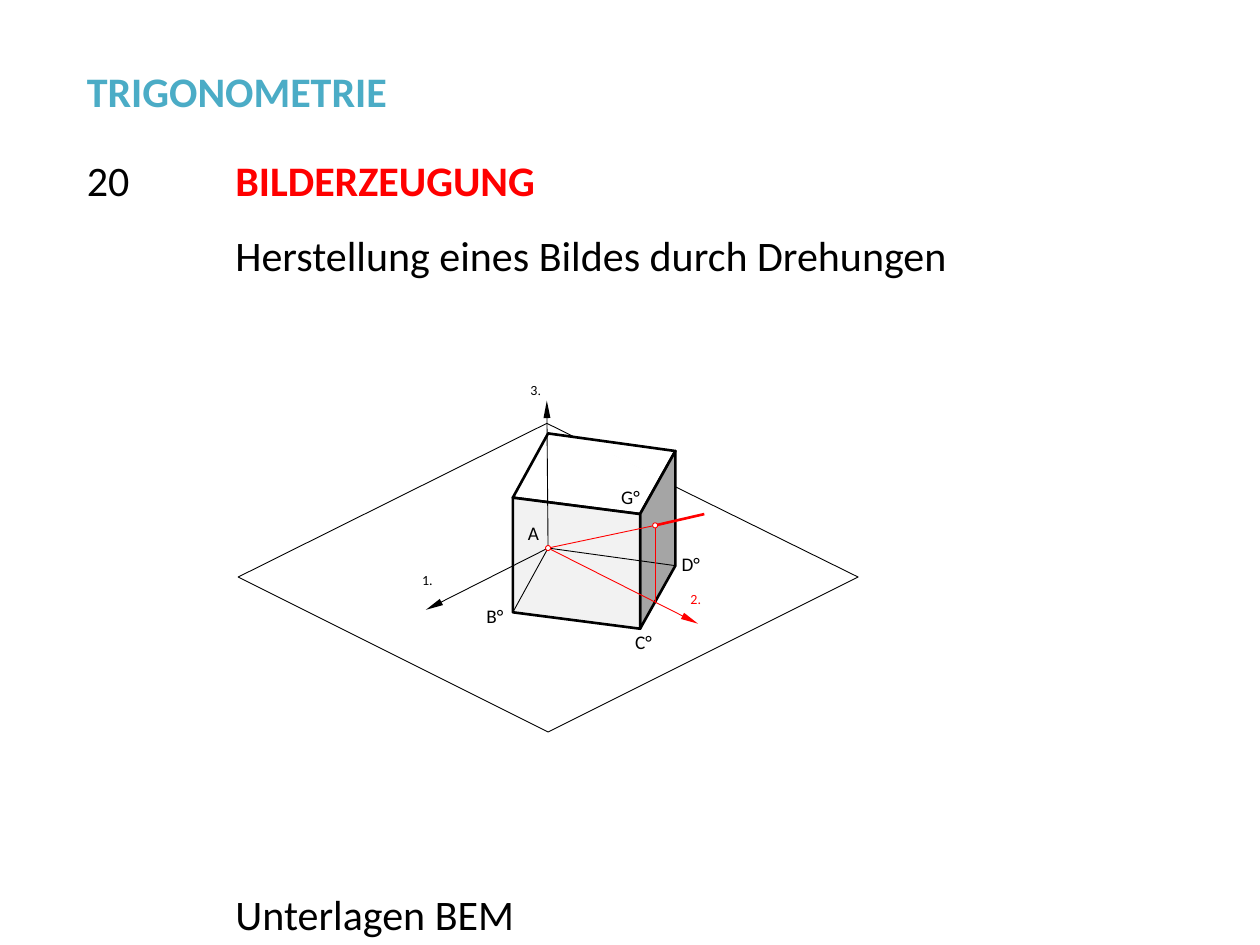
import pptx
import pptx.dml.color
import pptx.enum.shapes
import pptx.oxml
import pptx.util
from pptx.util import Inches, Pt

BLACK, RED, WHITE, TEAL = "000000", "FF0000", "FFFFFF", "4BACC6"
THIN, THICK = 0.5, 1.5

# text, left, top, width, colour, bold
HEADINGS = [
    ("20", 0.59, 1.18, 1.02, BLACK, False),
    ("TRIGONOMETRIE", 0.59, 0.47, 4.41, TEAL, True),
    ("BILDERZEUGUNG", 1.77, 1.18, 6.9, RED, True),
    ("Unterlagen BEM", 1.77, 7, 6.48, BLACK, False),
    ("Herstellung eines Bildes durch Drehungen", 1.77, 1.77, 6.9, BLACK, False),
]

# runs with their fonts, left, top, size, colour
LABELS = [
    ([("C°", "Calibri")], 5.04, 5, 11, BLACK),
    ([("D°", "Calibri")], 5.41, 4.38, 11, BLACK),
    ([("B°", "Calibri")], 3.86, 4.8, 11, BLACK),
    ([("G°", "Calibri")], 4.93, 3.85, 11, BLACK),
    ([("A", "Calibri")], 4.19, 4.14, 11, BLACK),
    ([("1.", "Calibri")], 3.35, 4.54, 8, BLACK),
    ([("2.", "Calibri")], 5.48, 4.69, 8, RED),
    ([("3", "Calibri"), (".", "Times New Roman")], 4.21, 3.03, 8, BLACK),
]

# Corners of the cube's base; the top lies one edge higher
A, B, C, D = (4.35, 4.35), (4.07, 4.86), (5.08, 4.99), (5.36, 4.49)
EDGE = 0.91
TOP_A, TOP_B, TOP_C, TOP_D = [(x, y - EDGE) for x, y in (A, B, C, D)]
PIERCE = (5.2, 4.17)
GROUND = [(4.34, 3.36), (6.81, 4.58), (4.35, 5.81), (1.89, 4.58)]

# corners, fill, line width
FACES = [
    ([TOP_D, TOP_A, TOP_B, TOP_C], None, THICK),
    ([D, C, TOP_C, TOP_D], "A5A5A5", THICK),
    ([B, C, TOP_C, TOP_B], "F2F2F2", THICK),
    ([D, A, B, C], None, THIN),
]

# start, end, colour, line width, arrow
LINES = [
    (A, (4.34, 3.18), BLACK, THIN, True),
    (A, (3.38, 4.84), BLACK, THIN, True),
    (A, (5.54, 4.95), RED, THIN, True),
    (PIERCE, (5.59, 4.08), RED, THICK, False),
    ((5.2, 4.78), PIERCE, RED, THIN, False),
    (A, PIERCE, RED, THIN, False),
]
DOT = 0.04


def rgb(color):
    return pptx.dml.color.RGBColor.from_string(color)


def style(sp, fill, line, width):
    sp.shadow.inherit = False
    if fill:
        sp.fill.solid()
        sp.fill.fore_color.rgb = rgb(fill)
    else:
        sp.fill.background()
    sp.line.color.rgb = rgb(line)
    sp.line.width = Pt(width)


def add_polygon(shapes, corners, fill, width):
    points = [(Inches(x), Inches(y)) for x, y in corners]
    builder = shapes.build_freeform(*points[0])
    builder.add_line_segments(points[1:], close=True)
    style(builder.convert_to_shape(), fill, BLACK, width)


def add_line(shapes, start, end, color, width, arrow=False):
    ends = [Inches(v) for v in (*start, *end)]
    sp = shapes.add_connector(pptx.enum.shapes.MSO_CONNECTOR.STRAIGHT, *ends)
    sp.line.color.rgb = rgb(color)
    sp.line.width = Pt(width)
    if arrow:
        tail = pptx.oxml.parse_xml(
            '<a:tailEnd xmlns:a="http://schemas.openxmlformats.org/drawingml/2006/main"'
            ' type="triangle" w="sm" len="lg"/>')
        sp.line._get_or_add_ln().append(tail)
    effects = pptx.oxml.parse_xml(
        '<a:effectLst xmlns:a="http://schemas.openxmlformats.org/drawingml/2006/main"/>')
    sp._element.spPr.append(effects)


def add_dot(shapes, center):
    x, y = [Inches(v - DOT / 2) for v in center]
    sp = shapes.add_shape(pptx.enum.shapes.MSO_SHAPE.OVAL, x, y, Inches(DOT), Inches(DOT))
    style(sp, WHITE, RED, THIN)


def add_text(shapes, box, size, color):
    """Add a wrapping text box; return its frame and its first paragraph."""
    tf = shapes.add_textbox(*[Inches(v) for v in box]).text_frame
    tf.word_wrap = True
    p = tf.paragraphs[0]
    p.font.size = Pt(size)
    p.font.color.rgb = rgb(color)
    return tf, p


def add_label(shapes, runs, left, top, size, color):
    tf, p = add_text(shapes, (left, top, 0.18, 0.27), size, color)
    tf.margin_left = tf.margin_top = tf.margin_right = tf.margin_bottom = 0
    p.space_after = Pt(10)
    for text, font in runs:
        r = p.add_run()
        r.text = text
        r.font.name = font


def add_heading(shapes, text, left, top, width, color, bold):
    _, p = add_text(shapes, (left, top, width, 0.5), 24, color)
    p.text = text
    p.font.name = "Calibri"
    p.font.bold = bold


def main():
    prs = pptx.Presentation()
    prs.slide_width, prs.slide_height = Inches(10), Inches(7.5)
    s = prs.slides.add_slide(prs.slide_layouts[6])

    drawing = s.shapes.add_group_shape().shapes
    add_polygon(drawing, GROUND, None, THIN)
    # White line hides the ground's edge behind the cube
    add_line(drawing, (4.56, 3.47), (5.35, 3.86), WHITE, THICK)
    for face in FACES:
        add_polygon(drawing, *face)
    for line in LINES:
        add_line(drawing, *line)
    for center in (PIERCE, A):
        add_dot(drawing, center)
    for label in LABELS:
        add_label(drawing, *label)

    for heading in HEADINGS:
        add_heading(s.shapes, *heading)
    prs.save("out.pptx")


if __name__ == "__main__":
    main()
